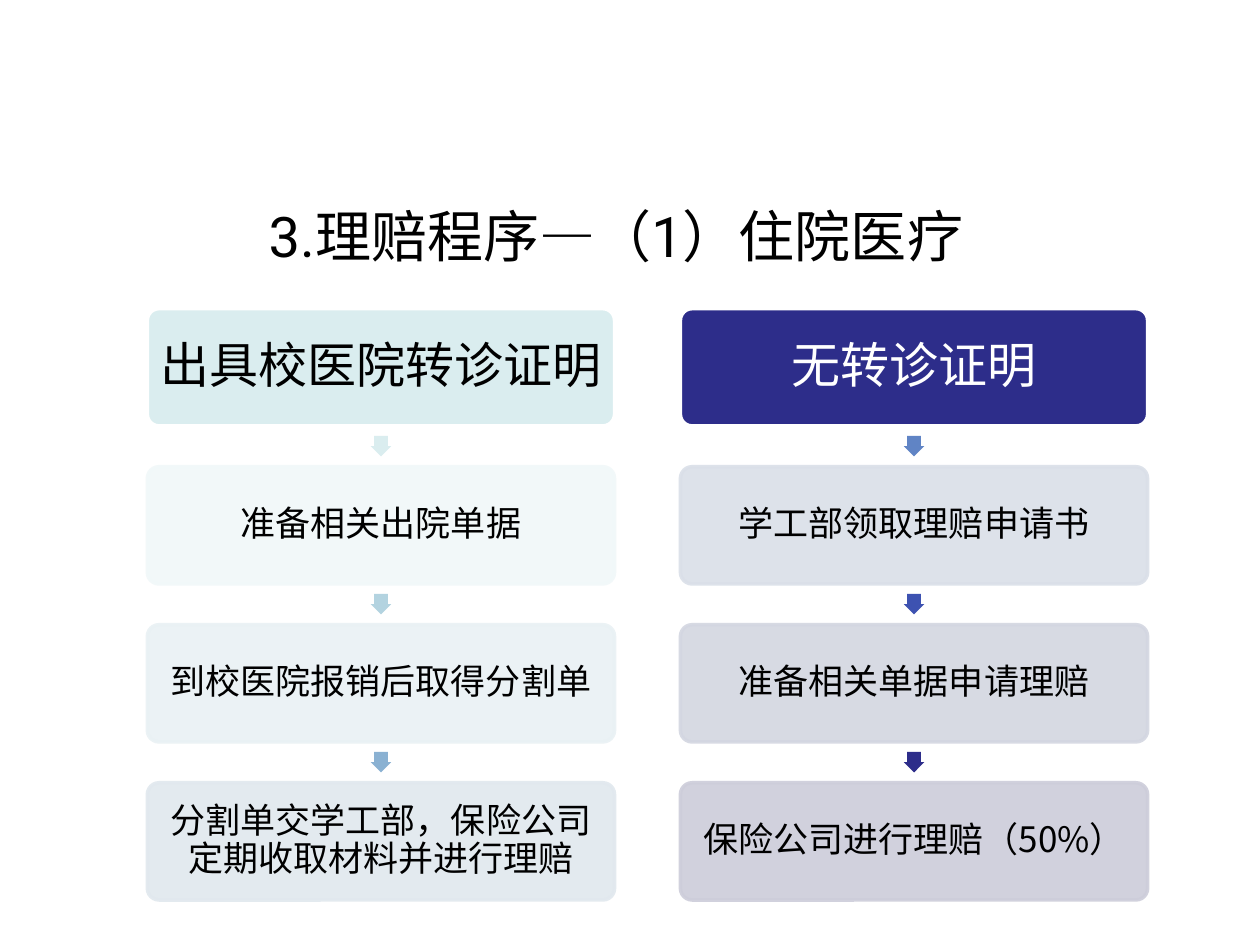
from lxml import etree
from pptx import Presentation
from pptx.dml.color import RGBColor
from pptx.enum.shapes import MSO_SHAPE
from pptx.enum.text import MSO_ANCHOR, PP_ALIGN
from pptx.oxml.ns import qn
from pptx.util import Pt

ROUNDED = MSO_SHAPE.ROUNDED_RECTANGLE
ARROW = MSO_SHAPE.RIGHT_ARROW
CENTER = PP_ALIGN.CENTER
TOP, MIDDLE = MSO_ANCHOR.TOP, MSO_ANCHOR.MIDDLE

BLACK = RGBColor(0x00, 0x00, 0x00)
WHITE = RGBColor(0xFF, 0xFF, 0xFF)
ICE = RGBColor(0xDA, 0xED, 0xEF)
NAVY = RGBColor(0x2D, 0x2D, 0x8A)
STEP_FILLS = [
    [RGBColor(0xF1, 0xF8, 0xF9), RGBColor(0xE9, 0xF1, 0xF4), RGBColor(0xE1, 0xE8, 0xEE)],
    [RGBColor(0xDA, 0xDF, 0xE8), RGBColor(0xD3, 0xD6, 0xE1), RGBColor(0xCD, 0xCD, 0xDA)],
]
ARROW_FILLS = [
    [ICE, RGBColor(0xB3, 0xD3, 0xE0), RGBColor(0x8A, 0xB1, 0xD2)],
    [RGBColor(0x60, 0x84, 0xC5), RGBColor(0x3D, 0x52, 0xB1), NAVY],
]

TITLE_FONT = "Roboto"
BODY_FONT = "Noto Sans CJK JP"

# Grid of the two flows, in points
LEFT, TOP_EDGE = 84.2, 176.4
COLUMN_PITCH, ROW_PITCH = 304.6, 90.3
BOX_WIDTH, BOX_HEIGHT = 267, 67
ARROW_SIZE = 11.7
ARROW_OFFSET = 72.7

# Heading, heading fill, heading text colour, steps
FLOWS = [
    ("出具校医院转诊证明", ICE, BLACK,
     ["准备相关出院单据", "到校医院报销后取得分割单",
      "分割单交学工部，保险公司定期收取材料并进行理赔"]),
    ("无转诊证明", NAVY, WHITE,
     ["学工部领取理赔申请书", "准备相关单据申请理赔", "保险公司进行理赔（50%）"]),
]


def format_text(frame, text, font, size, color):
    frame.text = text
    frame.word_wrap = True
    para = frame.paragraphs[0]
    para.alignment = CENTER
    for span in para.runs:
        span.font.name = font
        span.font.size = Pt(size)
        span.font.color.rgb = color
    return para


def set_opacity(color_format, percent):
    color = color_format._xFill.find(qn("a:srgbClr"))
    etree.SubElement(color, qn("a:alpha")).set("val", str(percent * 1000))


def add_title(page, text):
    title = page.shapes.title
    title.left, title.top = Pt(28), Pt(111.6)
    title.width, title.height = Pt(648), Pt(90)
    title.text_frame.vertical_anchor = TOP
    format_text(title.text_frame, text, TITLE_FONT, 32, BLACK)


def add_box(page, left, top, text, size, fill, line, color, opacity=100):
    box = page.shapes.add_shape(ROUNDED, Pt(left), Pt(top), Pt(BOX_WIDTH), Pt(BOX_HEIGHT))
    box.adjustments[0] = 0.1
    box.shadow.inherit = False
    box.fill.solid()
    box.fill.fore_color.rgb = fill
    box.line.color.rgb = line
    box.line.width = Pt(2)
    if opacity < 100:
        set_opacity(box.fill.fore_color, opacity)
        set_opacity(box.line.fill.fore_color, opacity)
    frame = box.text_frame
    frame.vertical_anchor = MIDDLE
    frame.margin_left = frame.margin_right = Pt(3)
    frame.margin_top = frame.margin_bottom = Pt(3)
    para = format_text(frame, text, BODY_FONT, size, color)
    para.line_spacing = 0.9


def add_arrow(page, left, top, fill):
    arrow = page.shapes.add_shape(ARROW, Pt(left), Pt(top), Pt(ARROW_SIZE), Pt(ARROW_SIZE))
    arrow.rotation = 90
    arrow.adjustments[0] = 0.667
    arrow.adjustments[1] = 0.5
    arrow.shadow.inherit = False
    arrow.fill.solid()
    arrow.fill.fore_color.rgb = fill
    arrow.line.fill.background()


def add_flow(page, left, flow, step_fills, arrow_fills):
    heading, fill, color, steps = flow
    add_box(page, left, TOP_EDGE, heading, 28, fill, WHITE, color)
    arrow_left = left + (BOX_WIDTH - ARROW_SIZE) / 2
    for row, (step, step_fill, arrow_fill) in enumerate(zip(steps, step_fills, arrow_fills)):
        top = TOP_EDGE + row * ROW_PITCH
        add_arrow(page, arrow_left, top + ARROW_OFFSET, arrow_fill)
        add_box(page, left, top + ROW_PITCH, step, 20, step_fill, step_fill, BLACK, 90)


def main():
    deck = Presentation()
    deck.slide_width, deck.slide_height = Pt(720), Pt(540)
    page = deck.slides.add_slide(deck.slide_layouts[5])
    add_title(page, "3.理赔程序—（1）住院医疗")
    # One column of boxes and arrows per claim route
    for column, flow in enumerate(FLOWS):
        add_flow(page, LEFT + column * COLUMN_PITCH, flow,
                 STEP_FILLS[column], ARROW_FILLS[column])
    deck.save("out.pptx")


if __name__ == "__main__":
    main()
